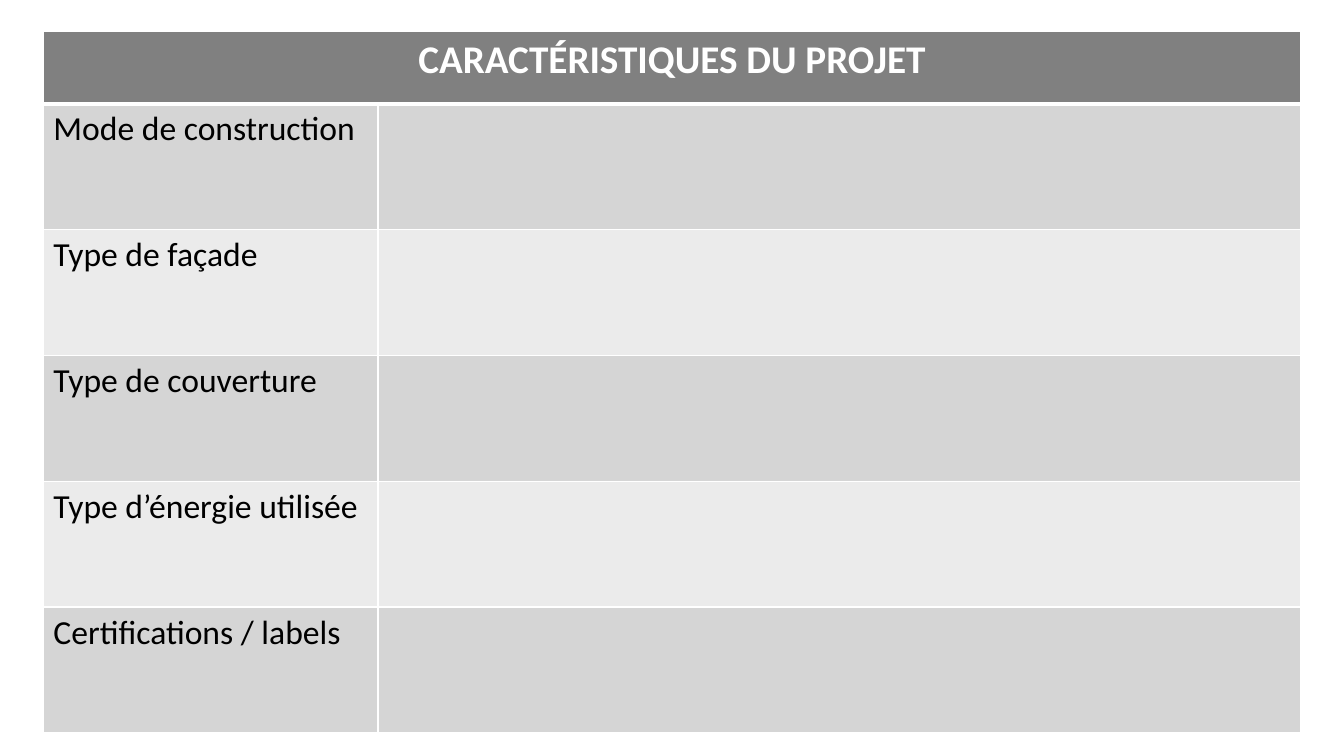
import lxml.etree
import pptx
import pptx.dml.color
import pptx.enum.text
import pptx.oxml.ns
import pptx.util

Pt = pptx.util.Pt
qn = pptx.oxml.ns.qn

COLORS = {
    "header": "808080",
    "dark_band": "D5D5D5",
    "light_band": "EBEBEB",
    "border": "FFFFFF",
    "header_text": "FFFFFF",
    "label_text": "000000",
}
FONT = "Calibri"
TITLE = "CARACTÉRISTIQUES DU PROJET"
LABELS = [
    "Mode de construction",
    "Type de façade",
    "Type de couverture",
    "Type d’énergie utilisée",
    "Certifications / labels",
]
HEADER_HEIGHT = 51.8
LABEL_WIDTH = 239


def rgb(name):
    return pptx.dml.color.RGBColor.from_string(COLORS[name])


def style_cell(cell, fill, top=1, bottom=1):
    properties = cell._tc.get_or_add_tcPr()
    for side, width in (("L", 1), ("R", 1), ("T", top), ("B", bottom)):
        line = lxml.etree.SubElement(properties, qn(f"a:ln{side}"), w=str(Pt(width)))
        solid = lxml.etree.SubElement(line, qn("a:solidFill"))
        lxml.etree.SubElement(solid, qn("a:srgbClr"), val=COLORS["border"])
    cell.fill.solid()
    cell.fill.fore_color.rgb = rgb(fill)


def write_cell(cell, text, size, color, bold=False):
    paragraph = cell.text_frame.paragraphs[0]
    run = paragraph.add_run()
    run.text = text
    run.font.name = FONT
    run.font.size = Pt(size)
    run.font.bold = bold
    run.font.color.rgb = rgb(color)
    return paragraph


def add_project_table(slide, left, top, width, height):
    shape = slide.shapes.add_table(
        len(LABELS) + 1, 2, Pt(left), Pt(top), Pt(width), Pt(height)
    )
    table = shape.table
    table.columns[0].width = Pt(LABEL_WIDTH)
    table.columns[1].width = Pt(width - LABEL_WIDTH)
    table.rows[0].height = Pt(HEADER_HEIGHT)

    header = table.cell(0, 0)
    header.merge(table.cell(0, 1))
    for cell in table.rows[0].cells:
        style_cell(cell, "header", bottom=3)
    paragraph = write_cell(header, TITLE, 28, "header_text", bold=True)
    paragraph.alignment = pptx.enum.text.PP_ALIGN.CENTER

    for index, label in enumerate(LABELS, start=1):
        table.rows[index].height = Pt((height - HEADER_HEIGHT) / len(LABELS))
        band = "dark_band" if index % 2 else "light_band"
        for cell in table.rows[index].cells:
            style_cell(cell, band, top=3 if index == 1 else 1)
        write_cell(table.cell(index, 0), label, 24, "label_text")


def main():
    presentation = pptx.Presentation()
    presentation.slide_width = Pt(960)
    presentation.slide_height = Pt(540)
    slide = presentation.slides.add_slide(presentation.slide_layouts[6])
    add_project_table(slide, 31, 22.5, 898, 501)
    presentation.save("out.pptx")


if __name__ == "__main__":
    main()
